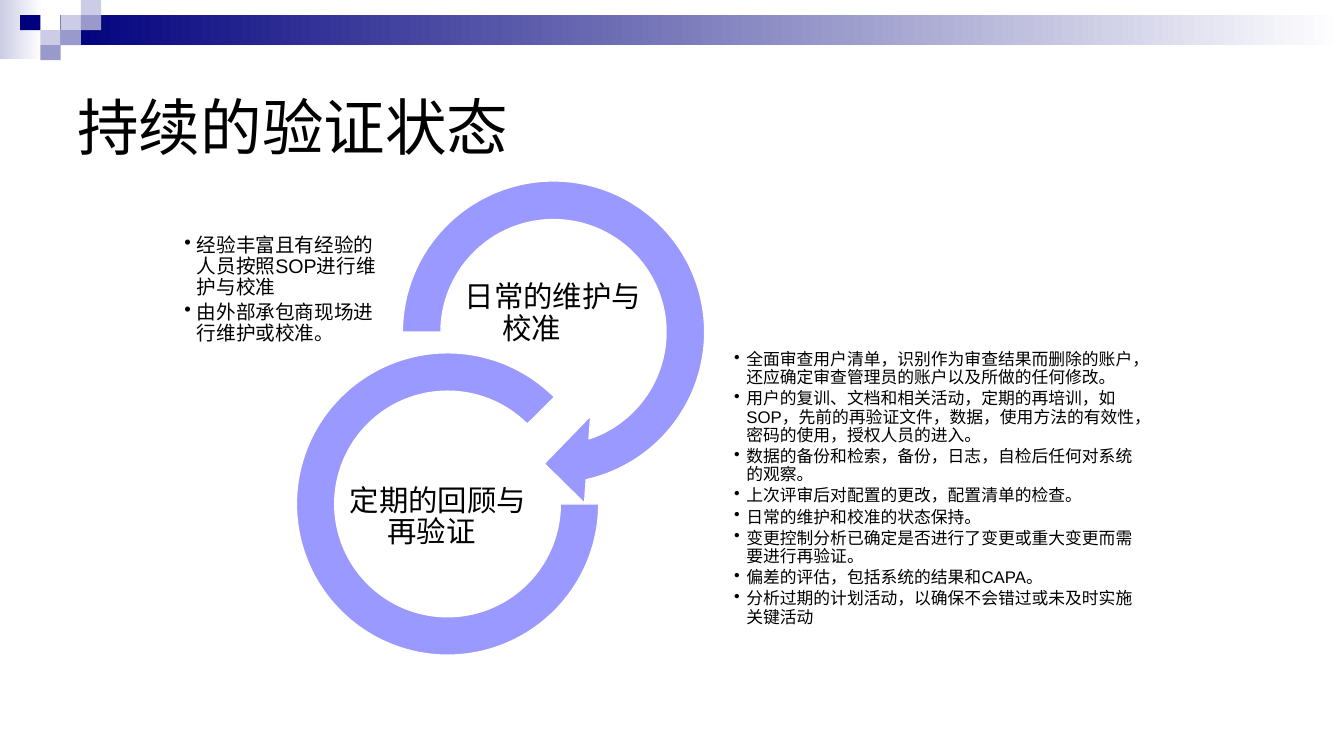
import pptx
import pptx.util
import pptx.dml.color
import pptx.enum.lang
import pptx.enum.shapes
import pptx.enum.text
import pptx.oxml.ns
from lxml import etree

Cm = pptx.util.Cm
Pt = pptx.util.Pt
RGBColor = pptx.dml.color.RGBColor
MSO_SHAPE = pptx.enum.shapes.MSO_SHAPE
PP_ALIGN = pptx.enum.text.PP_ALIGN

BLACK = RGBColor(0x00, 0x00, 0x00)
WHITE = RGBColor(0xFF, 0xFF, 0xFF)
NAVY = RGBColor(0x00, 0x00, 0x7D)
PALE = RGBColor(0xCC, 0xCC, 0xE6)
MID = RGBColor(0x99, 0x99, 0xCC)
RING = RGBColor(0x99, 0x99, 0xFF)

prs = pptx.Presentation()
prs.slide_width, prs.slide_height = Cm(33.87), Cm(19.05)
s = prs.slides.add_slide(prs.slide_layouts[6])


def add_shape(kind, left, top, width, height, color, fade=False, outline=False, adjustments=()):
    """Add a preset shape, filled plainly or fading to white from left to right."""
    sp = s.shapes.add_shape(kind, Cm(left), Cm(top), Cm(width), Cm(height))
    sp.shadow.inherit = False
    if fade:
        sp.fill.gradient()
        sp.fill.gradient_angle = 0
        for stop, rgb in zip(sp.fill.gradient_stops, (color, WHITE)):
            stop.color.rgb = rgb
    else:
        sp.fill.solid()
        sp.fill.fore_color.rgb = color
    if outline:
        sp.line.color.rgb = WHITE
        sp.line.width = Pt(1)
    else:
        sp.line.fill.background()
    for i, value in enumerate(adjustments):
        sp.adjustments[i] = value


def add_text(text, left, top, width, height, size=12, align=PP_ALIGN.LEFT,
             inset=0.03, spacing=0.9, bullet=False):
    """Add a text box with one paragraph for each line of text."""
    tf = s.shapes.add_textbox(Cm(left), Cm(top), Cm(width), Cm(height)).text_frame
    tf.word_wrap = True
    tf.vertical_anchor = pptx.enum.text.MSO_ANCHOR.MIDDLE
    tf.margin_left = tf.margin_right = tf.margin_top = tf.margin_bottom = Cm(inset)
    for i, line in enumerate(text.split("\n")):
        p = tf.add_paragraph() if i else tf.paragraphs[0]
        p.alignment = align
        p.line_spacing = spacing
        r = p.add_run()
        r.text = line
        r.font.name = "Arial"
        r.font.size = Pt(size)
        r.font.color.rgb = BLACK
        r.font.language_id = pptx.enum.lang.MSO_LANGUAGE_ID.SIMPLIFIED_CHINESE
        if bullet:
            p.space_after = Pt(round(size * 0.18, 1))
            pPr = p._p.get_or_add_pPr()
            pPr.set("marL", str(Cm(0.31)))
            pPr.set("indent", str(Cm(-0.31)))
            etree.SubElement(pPr, pptx.oxml.ns.qn("a:buChar")).set("char", "•")


# Header band and its mosaic, on a grid of small tiles
TILE_W, TILE_H = 0.51, 0.38
add_shape(MSO_SHAPE.RECTANGLE, 0, 0, 1.07, 1.48, PALE, fade=True)
add_shape(MSO_SHAPE.RECTANGLE, 1.52, 0.38, 32.35, 0.76, NAVY, fade=True)
for col, row, color in [(3, 1, PALE), (4, 0, PALE), (4, 1, MID), (2, 2, PALE),
                        (1, 1, NAVY), (3, 2, MID), (2, 3, MID)]:
    add_shape(MSO_SHAPE.RECTANGLE, col * TILE_W, row * TILE_H, TILE_W, TILE_H, color)

add_text("持续的验证状态", 1.7, 1.27, 30.48, 3.81, size=44, inset=0.25, spacing=1.0)

# Upper ring: daily maintenance
add_shape(MSO_SHAPE.CIRCULAR_ARROW, 9.52, 3.94, 8.86, 8.86, RING, outline=True,
          adjustments=(0.11, 11.42, 45, 108, 0.125))
add_text("经验丰富且有经验的人员按照SOP进行维护与校准\n"
         "由外部承包商现场进行维护或校准。",
         4.62, 5.54, 5.31, 3.53, size=14, bullet=True)
add_text("日常的维护与校准\t", 11.46, 6.68, 4.95, 2.46, size=21, align=PP_ALIGN.CENTER)

# Lower ring: periodic review
add_shape(MSO_SHAPE.BLOCK_ARC, 7.47, 8.89, 7.62, 7.62, RING, outline=True,
          adjustments=(0, 189, 0.127))
add_text("全面审查用户清单，识别作为审查结果而删除的账户，还应确定审查管理员的账户以及所做的任何修改。\n"
         "用户的复训、文档和相关活动，定期的再培训，如SOP，先前的再验证文件，数据，使用方法的有效性，密码的使用，授权人员的进入。\n"
         "数据的备份和检索，备份，日志，自检后任何对系统的观察。\n"
         "上次评审后对配置的更改，配置清单的检查。\n"
         "日常的维护和校准的状态保持。\n"
         "变更控制分析已确定是否进行了变更或重大变更而需要进行再验证。\n"
         "偏差的评估，包括系统的结果和CAPA。\n"
         "分析过期的计划活动，以确保不会错过或未及时实施关键活动",
         18.47, 8.23, 10.39, 8.18, size=12, bullet=True)
add_text("定期的回顾与再验证\t", 8.56, 11.81, 4.95, 2.46, size=21, align=PP_ALIGN.CENTER)

prs.save("out.pptx")
